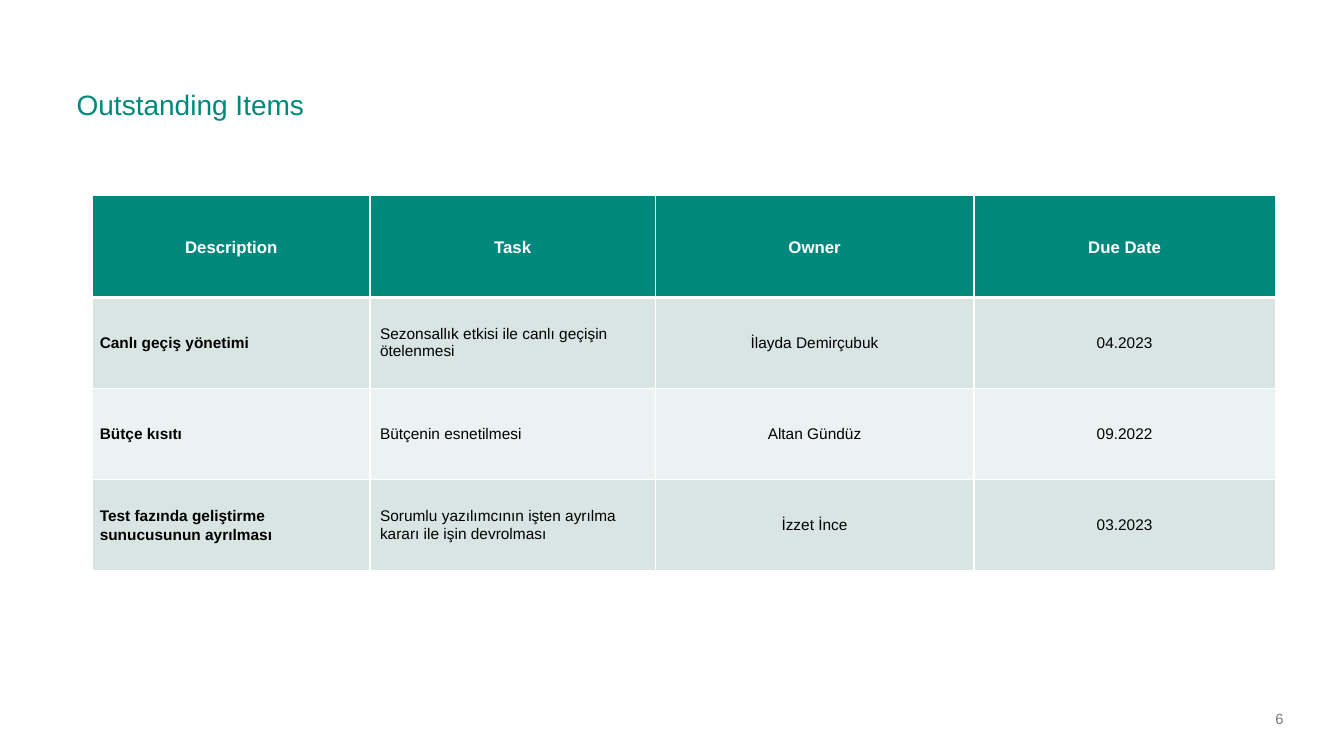
from dataclasses import dataclass

from lxml.etree import SubElement
from pptx import Presentation
from pptx.dml.color import RGBColor
from pptx.enum.text import MSO_ANCHOR as Anchor, MSO_AUTO_SIZE as AutoSize, PP_ALIGN as Align
from pptx.oxml.ns import qn
from pptx.util import Inches, Pt


@dataclass(frozen=True)
class Theme:
    font: str = "Arial"
    teal: str = "00887D"
    band_dark: str = "D8E5E3"
    band_light: str = "ECF2F1"
    white: str = "FFFFFF"
    black: str = "000000"
    gray: str = "777777"
    title_size: float = 20
    header_size: float = 12
    body_size: float = 11
    number_size: float = 10.5
    thin_line: float = 1
    thick_line: float = 3


@dataclass(frozen=True)
class Area:
    """Place and size as percentages of the slide's width and height."""
    left: float
    top: float
    width: float
    height: float


@dataclass(frozen=True)
class Column:
    heading: str
    share: float
    align: Align = Align.CENTER
    bold: bool = False


@dataclass(frozen=True)
class Item:
    description: str
    task: str
    owner: str
    due_date: str

    def values(self) -> tuple[str, ...]:
        return self.description, self.task, self.owner, self.due_date


THEME = Theme()
SLIDE_WIDTH, SLIDE_HEIGHT = Inches(13.33), Inches(7.5)
TITLE_AREA = Area(5.7, 10.27, 89.2, 5.87)
TABLE_AREA = Area(6.9, 25.87, 88, 49.62)
NUMBER_AREA = Area(94.9, 92.4, 4.8, 5.33)
HEADER_SHARE, BODY_SHARE = 13.47, 12.05

COLUMNS = [
    Column("Description", 20.63, Align.LEFT, bold=True),
    Column("Task", 21.23, Align.LEFT),
    Column("Owner", 23.71),
    Column("Due Date", 22.43),
]
ITEMS = [
    Item("Canlı geçiş yönetimi", "Sezonsallık etkisi ile canlı geçişin ötelenmesi",
         "İlayda Demirçubuk", "04.2023"),
    Item("Bütçe kısıtı", "Bütçenin esnetilmesi", "Altan Gündüz", "09.2022"),
    Item("Test fazında geliştirme sunucusunun ayrılması",
         "Sorumlu yazılımcının işten ayrılma kararı ile işin devrolması",
         "İzzet İnce", "03.2023"),
]


def across(share: float) -> int:
    return round(SLIDE_WIDTH * share / 100)


def down(share: float) -> int:
    return round(SLIDE_HEIGHT * share / 100)


def bounds(area: Area) -> tuple[int, int, int, int]:
    return across(area.left), down(area.top), across(area.width), down(area.height)


def set_margins(holder, side: float, edge: float) -> None:
    holder.margin_left = holder.margin_right = Inches(side)
    holder.margin_top = holder.margin_bottom = Inches(edge)


def write(frame, text: str, *, size: float, color: str, bold: bool = False,
          align: Align = Align.LEFT, spacing: float = 1.0) -> None:
    para = frame.paragraphs[0]
    para.alignment = align
    para.line_spacing = spacing
    span = para.add_run()
    span.text = text
    span.font.name = THEME.font
    span.font.size = Pt(size)
    span.font.bold = bold
    span.font.color.rgb = RGBColor.from_string(color)


def set_border(cell, side: str, width: float) -> None:
    """Draw one side (L, R, T or B) in white; call before filling the cell."""
    line = SubElement(cell._tc.get_or_add_tcPr(), qn(f"a:ln{side}"), w=str(Pt(width)))
    SubElement(SubElement(line, qn("a:solidFill")), qn("a:srgbClr"), val=THEME.white)


def fill_cell(cell, text: str, column: Column, row: int) -> None:
    header = row == 0
    bold = header or column.bold
    cell.vertical_anchor = Anchor.MIDDLE
    if bold:
        set_margins(cell, 0.07, 0)
    thick_side = {0: "B", 1: "T"}.get(row)
    for side in "LRTB":
        set_border(cell, side, THEME.thick_line if side == thick_side else THEME.thin_line)
    band = THEME.band_dark if row % 2 else THEME.band_light
    cell.fill.solid()
    cell.fill.fore_color.rgb = RGBColor.from_string(THEME.teal if header else band)
    write(cell.text_frame, text, bold=bold,
          size=THEME.header_size if header else THEME.body_size,
          color=THEME.white if header else THEME.black,
          align=Align.CENTER if header else column.align,
          spacing=1.07 if bold else 1.0)


def add_items_table(page) -> None:
    lines = [tuple(column.heading for column in COLUMNS), *(item.values() for item in ITEMS)]
    table = page.shapes.add_table(len(lines), len(COLUMNS), *bounds(TABLE_AREA)).table
    for index, column in enumerate(COLUMNS):
        table.columns[index].width = across(column.share)
    for row, values in enumerate(lines):
        table.rows[row].height = down(BODY_SHARE if row else HEADER_SHARE)
        for index, (column, text) in enumerate(zip(COLUMNS, values)):
            fill_cell(table.cell(row, index), text, column, row)


def format_frame(frame, anchor: Anchor, edge: float) -> None:
    frame.word_wrap = True
    frame.auto_size = AutoSize.NONE
    frame.vertical_anchor = anchor
    set_margins(frame, 0, edge)


def add_title(page, text: str) -> None:
    title = page.shapes.title
    title.left, title.top, title.width, title.height = bounds(TITLE_AREA)
    format_frame(title.text_frame, Anchor.BOTTOM, 0)
    write(title.text_frame, text, size=THEME.title_size, color=THEME.teal, spacing=0.9)


def add_page_number(page, text: str) -> None:
    box = page.shapes.add_textbox(*bounds(NUMBER_AREA))
    format_frame(box.text_frame, Anchor.MIDDLE, 0.05)
    write(box.text_frame, text, size=THEME.number_size, color=THEME.gray)


def main() -> None:
    deck = Presentation()
    deck.slide_width, deck.slide_height = SLIDE_WIDTH, SLIDE_HEIGHT
    page = deck.slides.add_slide(deck.slide_layouts.get_by_name("Title Only"))
    add_title(page, "Outstanding Items")
    add_items_table(page)
    add_page_number(page, "6")
    deck.save("out.pptx")


if __name__ == "__main__":
    main()
